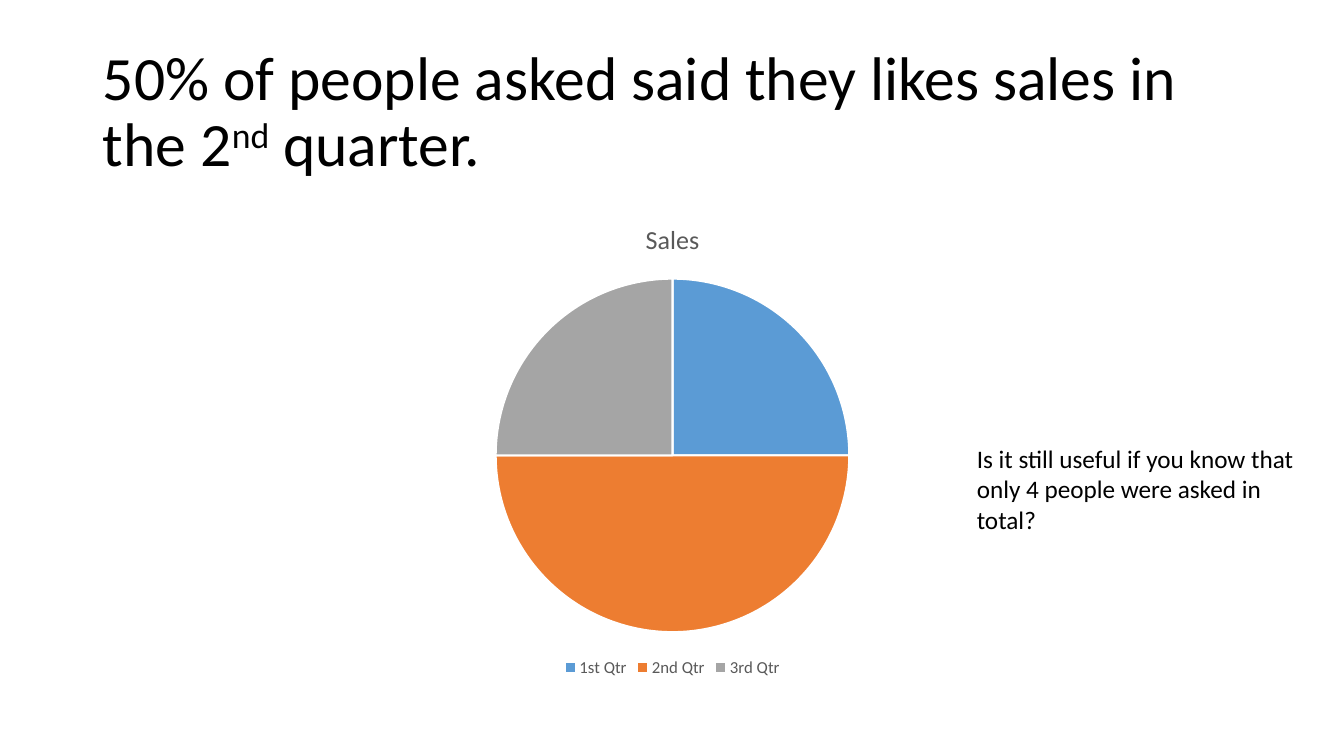
from pptx import Presentation
from pptx.chart.data import CategoryChartData
from pptx.dml.color import RGBColor
from pptx.enum.chart import XL_CHART_TYPE, XL_LEGEND_POSITION
from pptx.enum.text import MSO_ANCHOR, MSO_AUTO_SIZE, PP_ALIGN
from pptx.util import Inches, Pt

PIE = XL_CHART_TYPE.PIE
BOTTOM = XL_LEGEND_POSITION.BOTTOM
MIDDLE = MSO_ANCHOR.MIDDLE
GROW = MSO_AUTO_SIZE.SHAPE_TO_FIT_TEXT
NO_FIT = MSO_AUTO_SIZE.NONE
LEFT = PP_ALIGN.LEFT

FONT = "Calibri"
COLORS = {
    "text": "000000",
    "muted": "595959",
    "edge": "FFFFFF",
    "1st Qtr": "5B9BD5",
    "2nd Qtr": "ED7D31",
    "3rd Qtr": "A5A5A5",
}
SALES = {"1st Qtr": 25, "2nd Qtr": 50, "3rd Qtr": 25}


def color(name):
    return RGBColor.from_string(COLORS[name])


def style(font, size, name="text"):
    font.name = FONT
    font.size = Pt(size)
    font.bold = False
    font.color.rgb = color(name)


def set_title(slide, parts):
    title = slide.shapes.title
    title.left, title.top = Inches(0.92), Inches(0.4)
    title.width, title.height = Inches(11.5), Inches(1.45)
    frame = title.text_frame
    frame.word_wrap = True
    frame.auto_size = NO_FIT
    frame.vertical_anchor = MIDDLE
    para = frame.paragraphs[0]
    para.alignment = LEFT
    para.line_spacing = 0.9
    for text, raised in parts:
        run = para.add_run()
        run.text = text
        style(run.font, 44)
        if raised:
            run._r.get_or_add_rPr().set("baseline", "30000")


def add_pie(slide, name, values):
    data = CategoryChartData()
    data.categories = list(values)
    data.add_series(name, list(values.values()))
    chart = slide.shapes.add_chart(
        PIE, Inches(0.92), Inches(2), Inches(11.5), Inches(4.76), data
    ).chart
    style(chart.font, 10)

    chart.has_title = True
    head = chart.chart_title.text_frame
    head.text = name
    style(head.paragraphs[0].runs[0].font, 18.6, "muted")
    chart.chart_title.include_in_layout = False

    chart.has_legend = True
    chart.legend.position = BOTTOM
    chart.legend.include_in_layout = False
    style(chart.legend.font, 12, "muted")

    plot = chart.plots[0]
    plot.vary_by_categories = True
    for i, label in enumerate(values):
        form = plot.series[0].points[i].format
        form.fill.solid()
        form.fill.fore_color.rgb = color(label)
        form.line.color.rgb = color("edge")
        form.line.width = Pt(1.5)


def add_note(slide, text):
    box = slide.shapes.add_textbox(
        Inches(9.59), Inches(4.35), Inches(3.43), Inches(1.01)
    )
    frame = box.text_frame
    frame.word_wrap = True
    frame.auto_size = GROW
    frame.text = text
    style(frame.paragraphs[0].runs[0].font, 18)


def main():
    deck = Presentation()
    deck.slide_width, deck.slide_height = Inches(13.33), Inches(7.5)
    slide = deck.slides.add_slide(deck.slide_layouts[5])
    set_title(slide, [
        ("50% of people asked said they likes sales in the 2", False),
        ("nd", True),
        (" quarter.", False),
    ])
    add_pie(slide, "Sales", SALES)
    add_note(
        slide,
        "Is it still useful if you know that only 4 people were asked in total?",
    )
    deck.save("out.pptx")


if __name__ == "__main__":
    main()
